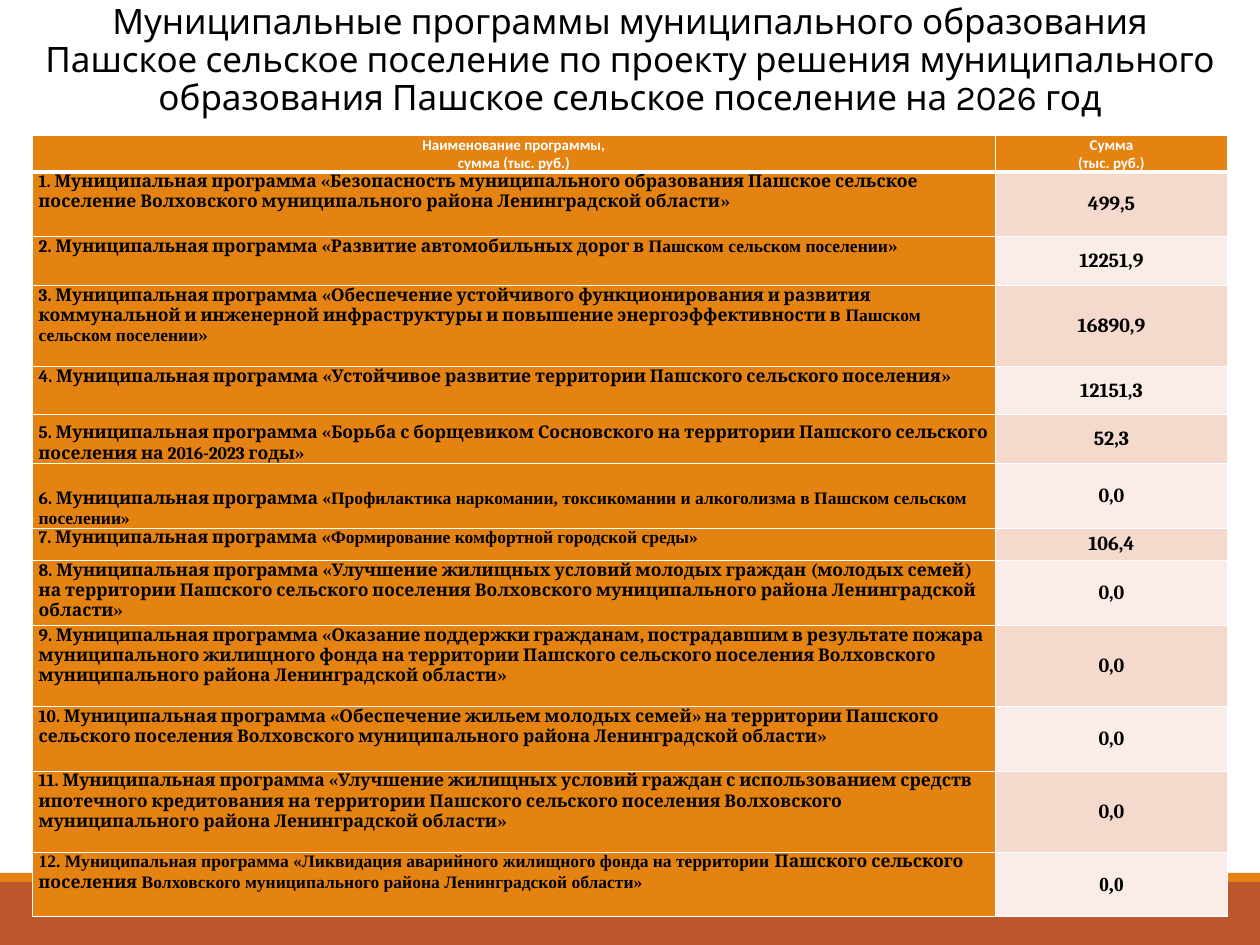
from lxml import etree
from pptx import Presentation
from pptx.dml.color import RGBColor
from pptx.enum.shapes import MSO_SHAPE
from pptx.enum.text import MSO_ANCHOR as ANCHOR, PP_ALIGN as ALIGN
from pptx.oxml.ns import qn
from pptx.util import Inches, Pt

ORANGE = RGBColor(0xE4, 0x83, 0x12)
RUST = RGBColor(0xBD, 0x58, 0x2C)
PINK = RGBColor(0xF5, 0xD9, 0xCC)
PALE = RGBColor(0xFA, 0xED, 0xE7)
WHITE = RGBColor(0xFF, 0xFF, 0xFF)
BLACK = RGBColor(0, 0, 0)
SERIF, TIMES = "Cambria", "Times New Roman"

TITLE = ("Муниципальные программы муниципального образования Пашское сельское "
         "поселение по проекту решения муниципального образования Пашское "
         "сельское поселение на 2026 год")
HEADERS = ["Наименование программы,\nсумма (тыс. руб.)", "Сумма\n(тыс. руб.)"]
HEADER_HEIGHT = 0.37
COL_WIDTHS = [10.7, 2.58]

# Row height, programme, amount; "|" switches between Cambria and Times New Roman
PROGRAMMES = [
    (0.72, "1. Муниципальная программа «Безопасность муниципального образования "
           "Пашское сельское поселение Волховского муниципального района "
           "Ленинградской области»", "499,5"),
    (0.54, "2. Муниципальная программа «Развитие автомобильных дорог в "
           "|Пашском сельском поселении|»", "12251,9"),
    (0.9, "3. Муниципальная программа «Обеспечение устойчивого функционирования и "
          "развития коммунальной и инженерной инфраструктуры и повышение "
          "энергоэффективности в |Пашском сельском поселении|»", "16890,9"),
    (0.54, "4. Муниципальная программа «Устойчивое развитие территории Пашского "
           "сельского поселения»", "12151,3"),
    (0.54, "5. Муниципальная программа «Борьба с борщевиком Сосновского на "
           "территории Пашского сельского поселения на 2016-2023 годы»", "52,3"),
    (0.72, "6. Муниципальная программа |«Профилактика наркомании, токсикомании и "
           "алкоголизма в Пашском сельском поселении»", "0,0"),
    (0.36, "7. Муниципальная программа «|Формирование комфортной городской среды»",
     "106,4"),
    (0.72, "8. Муниципальная программа «Улучшение жилищных условий молодых граждан "
           "(молодых семей) на территории Пашского сельского поселения Волховского "
           "муниципального района Ленинградской области»", "0,0"),
    (0.9, "9. Муниципальная программа «Оказание поддержки гражданам, пострадавшим в "
          "результате пожара муниципального жилищного фонда на территории Пашского "
          "сельского поселения Волховского муниципального района Ленинградской "
          "области»", "0,0"),
    (0.72, "10. Муниципальная программа «Обеспечение жильем молодых семей» на "
           "территории Пашского сельского поселения Волховского муниципального "
           "района Ленинградской области»", "0,0"),
    (0.9, "11. Муниципальная программа «Улучшение жилищных условий граждан с "
          "использованием средств ипотечного кредитования на территории Пашского "
          "сельского поселения Волховского муниципального района Ленинградской "
          "области»", "0,0"),
    (0.72, "|12. Муниципальная программа «Ликвидация аварийного жилищного фонда на "
           "территории |Пашского сельского поселения| Волховского муниципального "
           "района Ленинградской области»", "|0,0"),
]
BOTTOM_ROWS = (5, 6)


def style_cell(cell, fill, anchor, margin, top=1, bottom=1):
    for side, width in (("L", 1), ("R", 1), ("T", top), ("B", bottom)):
        ln = etree.SubElement(cell._tc.get_or_add_tcPr(), qn(f"a:ln{side}"),
                              w=str(Pt(width)))
        solid = etree.SubElement(ln, qn("a:solidFill"))
        etree.SubElement(solid, qn("a:srgbClr"), val=str(WHITE))
    cell.fill.solid()
    cell.fill.fore_color.rgb = fill
    cell.vertical_anchor = anchor
    cell.margin_left = cell.margin_right = Inches(margin)
    cell.margin_top = cell.margin_bottom = 0


def style_font(font, name, size, color, bold):
    font.name, font.size, font.bold = name, Pt(size), bold
    font.color.rgb = color


prs = Presentation()
prs.slide_width, prs.slide_height = Inches(14), Inches(10.5)
s = prs.slides.add_slide(prs.slide_layouts[6])

# Footer bands
for top, height, color in ((9.8, 0.7, RUST), (9.7, 0.1, ORANGE)):
    sp = s.shapes.add_shape(MSO_SHAPE.RECTANGLE, 0, Inches(top),
                            prs.slide_width, Inches(height))
    sp.shadow.inherit = False
    sp.fill.solid()
    sp.fill.fore_color.rgb = color
    sp.line.fill.background()

# Title
tf = s.shapes.add_textbox(Inches(0.36), 0, Inches(13.28), Inches(1.51)).text_frame
tf.word_wrap = True
p = tf.paragraphs[0]
p.text = TITLE
p.alignment = ALIGN.CENTER
p.line_spacing = 0.9
style_font(p.runs[0].font, "Karla", 28, BLACK, False)

# Table
heights = [HEADER_HEIGHT] + [row[0] for row in PROGRAMMES]
table = s.shapes.add_table(len(heights), 2, Inches(0.36), Inches(1.51),
                           Inches(sum(COL_WIDTHS)), Inches(sum(heights))).table
for col, width in zip(table.columns, COL_WIDTHS):
    col.width = Inches(width)
for row, height in zip(table.rows, heights):
    row.height = Inches(height)

# Header row
for c, text in enumerate(HEADERS):
    cell = table.cell(0, c)
    style_cell(cell, ORANGE, ANCHOR.MIDDLE, 0.04, bottom=3)
    cell.text_frame.text = text
    for p in cell.text_frame.paragraphs:
        p.alignment = ALIGN.CENTER
        style_font(p.runs[0].font, "Calibri", 12, WHITE, True)

# Programme rows
for i, (_, name, amount) in enumerate(PROGRAMMES, start=1):
    name_anchor = ANCHOR.BOTTOM if i in BOTTOM_ROWS else ANCHOR.TOP
    band = PINK if i % 2 else PALE
    columns = ((name, 14, ORANGE, name_anchor, ALIGN.LEFT),
               (amount, 16, band, ANCHOR.MIDDLE, ALIGN.CENTER))
    for c, (text, size, fill, anchor, align) in enumerate(columns):
        cell = table.cell(i, c)
        style_cell(cell, fill, anchor, 0.07, top=3 if i == 1 else 1)
        p = cell.text_frame.paragraphs[0]
        p.alignment = align
        for k, part in enumerate(text.split("|")):
            if part:
                r = p.add_run()
                r.text = part
                style_font(r.font, TIMES if k % 2 else SERIF, size, BLACK, True)

prs.save("out.pptx")
